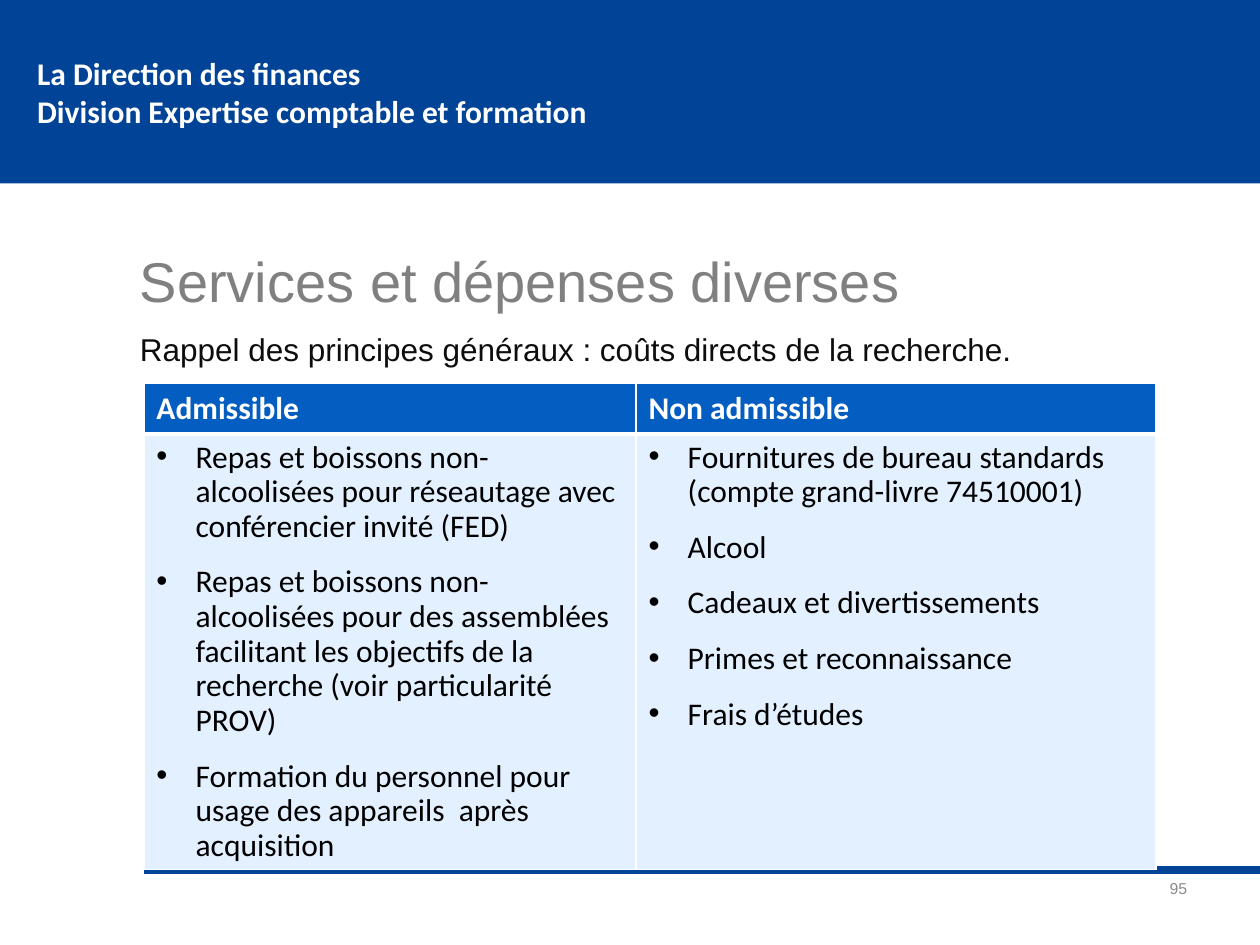
import lxml.etree
import pptx
import pptx.dml.color
import pptx.enum.shapes
import pptx.enum.text
import pptx.oxml.ns
import pptx.util

Cm = pptx.util.Cm
Pt = pptx.util.Pt
qn = pptx.oxml.ns.qn
ANCHOR = pptx.enum.text.MSO_ANCHOR
ALIGN = pptx.enum.text.PP_ALIGN

NAVY = "004397"
WHITE = "FFFFFF"
GOOD = [
    "Repas et boissons non-alcoolisées pour réseautage avec conférencier invité (FED)",
    "Repas et boissons non-alcoolisées pour des assemblées facilitant les objectifs de la recherche (voir particularité PROV)",
    "Formation du personnel pour usage des appareils  après acquisition",
]
BAD = [
    "Fournitures de bureau standards (compte grand-livre 74510001)",
    "Alcool",
    "Cadeaux et divertissements",
    "Primes et reconnaissance",
    "Frais d’études",
]


def rgb(code):
    return pptx.dml.color.RGBColor.from_string(code)


def write(frame, lines, font="Arial", size=18, color="000000", bold=False,
          align=ALIGN.LEFT, space=1.0, gap=0, left=0, hang=0, mark=None):
    for i, line in enumerate(lines):
        para = frame.paragraphs[0] if i == 0 else frame.add_paragraph()
        para.alignment = align
        para.line_spacing = space
        para.space_before = para.space_after = Pt(gap)
        props = para._p.get_or_add_pPr()
        props.set("marL", str(Cm(left)))
        props.set("indent", str(Cm(-hang)))
        if mark:
            lxml.etree.SubElement(props, qn("a:buFont"), typeface="Arial")
            lxml.etree.SubElement(props, qn("a:buChar"), char=mark)
        run = para.add_run()
        run.text = line
        run.font.name = font
        run.font.size = Pt(size)
        run.font.bold = bold
        run.font.color.rgb = rgb(color)


def clear(frame, anchor):
    frame.word_wrap = True
    frame.auto_size = pptx.enum.text.MSO_AUTO_SIZE.NONE
    frame.vertical_anchor = anchor
    frame.margin_left = frame.margin_right = 0
    frame.margin_top = frame.margin_bottom = 0


def add_text(slide, x, y, w, h, line, anchor=ANCHOR.TOP, **style):
    box = slide.shapes.add_textbox(Cm(x), Cm(y), Cm(w), Cm(h))
    clear(box.text_frame, anchor)
    write(box.text_frame, [line], **style)


def add_band(slide, x, y, w, h):
    band = slide.shapes.add_shape(
        pptx.enum.shapes.MSO_SHAPE.RECTANGLE, Cm(x), Cm(y), Cm(w), Cm(h))
    band.shadow.inherit = False
    band.fill.solid()
    band.fill.fore_color.rgb = rgb(NAVY)
    band.line.fill.background()
    band.text_frame.vertical_anchor = ANCHOR.MIDDLE
    write(band.text_frame,
          ["La Direction des finances", "Division Expertise comptable et formation"],
          font="Calibri", color=WHITE, bold=True, left=0.5)


def add_foot(slide, x, y, w):
    rule = slide.shapes.add_connector(
        pptx.enum.shapes.MSO_CONNECTOR.STRAIGHT, Cm(x), Cm(y), Cm(x + w), Cm(y))
    rule.line.color.rgb = rgb(NAVY)
    rule.line.width = Pt(4.5)
    lxml.etree.SubElement(rule._element.spPr, qn("a:effectLst"))
    add_text(slide, x + w - 2.69, y + 0.2, 1.22, 0.51, "95", ANCHOR.MIDDLE,
             size=9, color="8C8C8C", align=ALIGN.RIGHT, space=0.5)


def add_head(slide, x, y, w):
    title = slide.shapes.title
    title.left, title.top, title.width, title.height = Cm(x), Cm(y), Cm(w), Cm(1.2)
    clear(title.text_frame, ANCHOR.BOTTOM)
    write(title.text_frame, ["Services et dépenses diverses"],
          size=32, color="808080", space=0.85)
    add_text(slide, x, y + 1.6, w, 0.9,
             "Rappel des principes généraux : coûts directs de la recherche.",
             color="0D0D0D", space=0.9)


def paint(cell, fill, widths):
    props = cell._tc.get_or_add_tcPr()
    for side, width in zip("LRTB", widths):
        edge = lxml.etree.SubElement(props, qn("a:ln" + side), w=str(Pt(width)))
        solid = lxml.etree.SubElement(edge, qn("a:solidFill"))
        lxml.etree.SubElement(solid, qn("a:srgbClr"), val=WHITE)
    cell.fill.solid()
    cell.fill.fore_color.rgb = rgb(fill)


def add_grid(slide, x, y, wides, highs):
    grid = slide.shapes.add_table(
        2, 2, Cm(x), Cm(y), Cm(sum(wides)), Cm(sum(highs))).table
    for row, high in zip(grid.rows, highs):
        row.height = Cm(high)
    parts = [("Admissible", GOOD), ("Non admissible", BAD)]
    for i, (name, items) in enumerate(parts):
        grid.columns[i].width = Cm(wides[i])
        head, body = grid.cell(0, i), grid.cell(1, i)
        paint(head, "045DC0", (1, 1, 1, 3))
        paint(body, "E3F0FF", (1, 1, 3, 1))
        write(head.text_frame, [name], font="Calibri", color=WHITE, bold=True)
        write(body.text_frame, items, font="Calibri", space=0.9, gap=6,
              left=0.79, hang=0.79, mark="•")


def main():
    deck = pptx.Presentation()
    deck.slide_width, deck.slide_height = Cm(25.4), Cm(19.05)
    slide = deck.slides.add_slide(deck.slide_layouts[5])
    add_band(slide, 0, 0, 25.4, 3.7)
    add_foot(slide, 2.9, 17.53, 22.5)
    add_head(slide, 2.82, 5.13, 21)
    add_grid(slide, 2.9, 7.72, (9.92, 10.48), (1.02, 8.38))
    deck.save("out.pptx")


if __name__ == "__main__":
    main()
